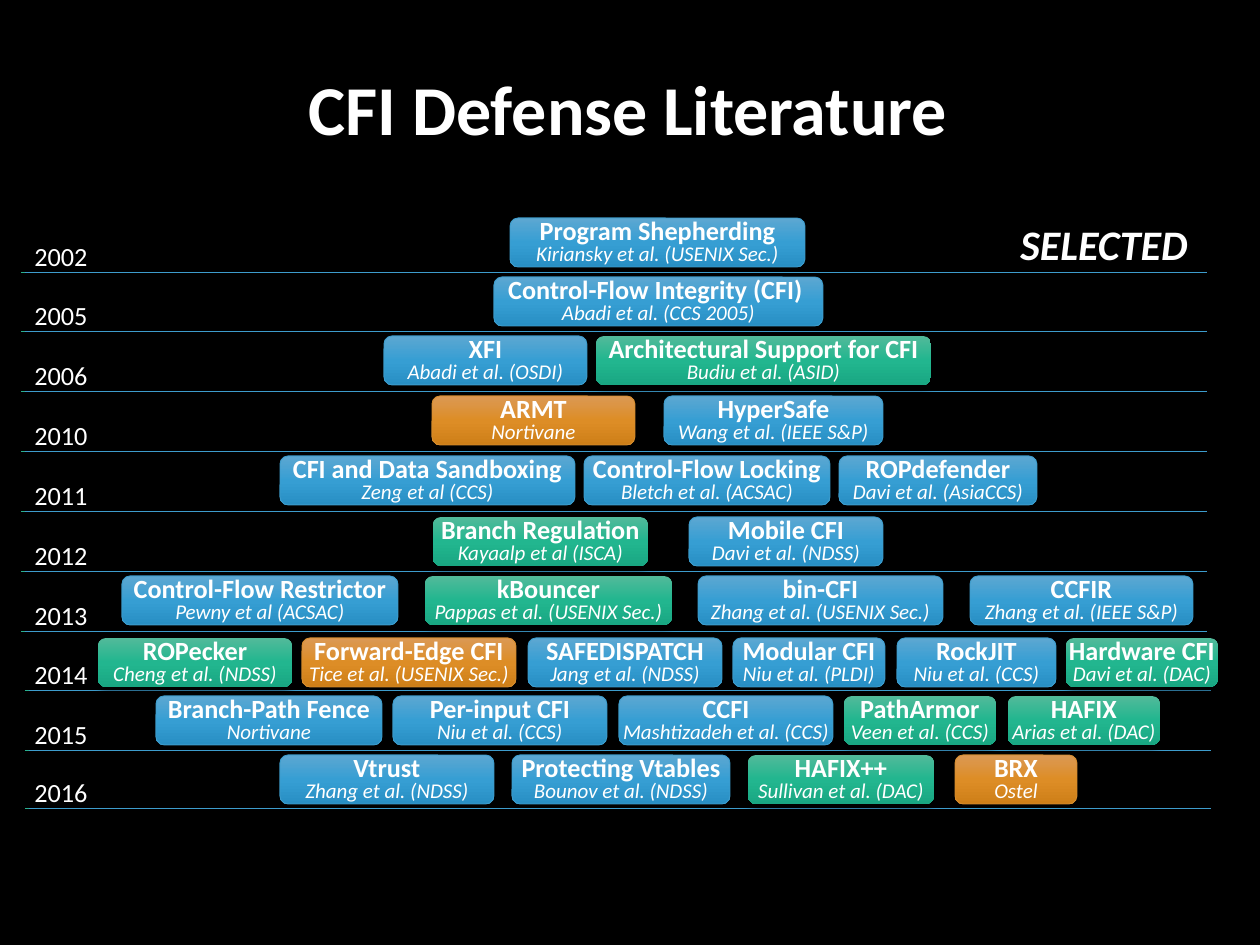
import lxml.etree
import pptx
import pptx.dml.color
import pptx.enum.shapes
import pptx.enum.text
import pptx.oxml
import pptx.oxml.ns
import pptx.util

EMU_PER_PX = 914400 / 126
CARD_HEIGHT = 49
COLORS = {"background": "000000", "text": "FFFFFF", "rule_green": "29AF8C", "rule_blue": "3D9CCC"}
KINDS = {
    "blue": {"stops": ("5DA7D2", "369ED3", "288FC4"), "border": "3D9CCC"},
    "green": {"stops": ("52BA9A", "22B68F", "19A782"), "border": None},
    "orange": {"stops": ("DB9955", "DD8D26", "CE7F18"), "border": "D58C2E"},
}
TITLE_FONT = {"size": pptx.util.Pt(40), "bold": True}
YEAR_FONT = {"size": pptx.util.Pt(15)}
NAME_FONT = {"size": pptx.util.Pt(15), "bold": True}
AUTHOR_FONT = {"size": pptx.util.Pt(12), "bold": False, "italic": True}
SELECTED_FONT = {"size": pptx.util.Pt(24), "bold": True, "italic": True}

YEARS = [
    ("2002", 272, 218, 21, [(510, 295, "blue", "Program Shepherding", "Kiriansky et al. (USENIX Sec.)")]),
    ("2005", 331, 277, 21, [(494, 329, "blue", "Control-Flow Integrity (CFI) ", "Abadi et al. (CCS 2005)")]),
    ("2006", 391, 336, 21, [
        (384, 203, "blue", "XFI", "Abadi et al. (OSDI)"),
        (596, 335, "green", "Architectural Support for CFI", "Budiu et al. (ASID)")]),
    ("2010", 451, 396, 21, [
        (432, 203, "orange", "ARMT", "Nortivane"),
        (664, 219, "blue", "HyperSafe", "Wang et al. (IEEE S&P)")]),
    ("2011", 511, 456, 21, [
        (280, 295, "blue", "CFI and Data Sandboxing", "Zeng et al (CCS)"),
        (584, 246, "blue", "Control-Flow Locking", "Bletch et al. (ACSAC)"),
        (839, 198, "blue", "ROPdefender", "Davi et al. (AsiaCCS)")]),
    ("2012", 571, 517, 21, [
        (433, 215, "green", "Branch Regulation", "Kayaalp et al (ISCA)"),
        (689, 194, "blue", "Mobile CFI", "Davi et al. (NDSS)")]),
    ("2013", 631, 576, 21, [
        (122, 276, "blue", "Control-Flow Restrictor", "Pewny et al (ACSAC)"),
        (425, 247, "green", "kBouncer", "Pappas et al. (USENIX Sec.)"),
        (698, 245, "blue", "bin-CFI", "Zhang et al. (USENIX Sec.)"),
        (970, 223, "blue", "CCFIR", "Zhang et al. (IEEE S&P)")]),
    ("2014", 690, 638, 25, [
        (98, 194, "green", "ROPecker", "Cheng et al. (NDSS)"),
        (302, 214, "orange", "Forward-Edge CFI", "Tice et al. (USENIX Sec.)"),
        (528, 194, "blue", "SAFEDISPATCH", "Jang et al. (NDSS)"),
        (733, 152, "blue", "Modular CFI", "Niu et al. (PLDI)"),
        (897, 159, "blue", "RockJIT", "Niu et al. (CCS)"),
        (1066, 152, "green", "Hardware CFI", "Davi et al. (DAC)")]),
    ("2015", 750, 696, 25, [
        (156, 226, "blue", "Branch-Path Fence", "Nortivane"),
        (393, 214, "blue", "Per-input CFI", "Niu et al. (CCS)"),
        (619, 214, "blue", "CCFI", "Mashtizadeh et al. (CCS)"),
        (844, 152, "green", "PathArmor", "Veen et al. (CCS)"),
        (1008, 152, "green", "HAFIX", "Arias et al. (DAC)")]),
    ("2016", 808, 755, 25, [
        (280, 214, "blue", "Vtrust", "Zhang et al. (NDSS)"),
        (512, 218, "blue", "Protecting Vtables", "Bounov et al. (NDSS)"),
        (748, 186, "green", "HAFIX++", "Sullivan et al. (DAC)"),
        (955, 122, "orange", "BRX", "Ostel")]),
]


def px(*lengths):
    """Turn pixel lengths into EMU."""
    return [pptx.util.Emu(round(length * EMU_PER_PX)) for length in lengths]


def rgb(value):
    """Turn a hex string into a colour."""
    return pptx.dml.color.RGBColor.from_string(value)


def apply(target, values):
    """Set each named attribute on the target."""
    for attribute, value in values.items():
        setattr(target, attribute, value)


def add_run(paragraph, wording, font):
    """Append a run in the slide's typeface."""
    run = paragraph.add_run()
    run.text = wording
    apply(run.font, {"name": "Calibri", **font})
    run.font.color.rgb = rgb(COLORS["text"])


def add_label(slide, box, wording, font, frame=None, paragraph=None):
    """Add a text box holding one line."""
    label = slide.shapes.add_textbox(*px(*box)).text_frame
    apply(label, frame or {})
    apply(label.paragraphs[0], paragraph or {})
    add_run(label.paragraphs[0], wording, font)


def add_rule(slide, left, y, color):
    """Add a thin line under a year."""
    rule = slide.shapes.add_connector(
        pptx.enum.shapes.MSO_CONNECTOR.STRAIGHT, *px(left, y, left + 1182, y))
    rule.line.color.rgb = rgb(color)
    rule.line.width = pptx.util.Pt(0.5)
    lxml.etree.SubElement(rule._element.spPr, pptx.oxml.ns.qn("a:effectLst"))


def paint_gradient(card, stops):
    """Fill a card with a vertical three-stop gradient."""
    marks = "".join(
        f'<a:gs pos="{i * 50000}"><a:srgbClr val="{stop}"/></a:gs>' for i, stop in enumerate(stops))
    gradient = pptx.oxml.parse_xml(
        f'<a:gradFill {pptx.oxml.ns.nsdecls("a")} rotWithShape="1"><a:gsLst>{marks}</a:gsLst>'
        '<a:lin ang="5400000" scaled="0"/></a:gradFill>')
    card._element.spPr.find(pptx.oxml.ns.qn("a:prstGeom")).addnext(gradient)


def add_shadow(card):
    """Give a card a soft shadow below it."""
    card._element.spPr.find(pptx.oxml.ns.qn("a:effectLst")).append(pptx.oxml.parse_xml(
        f'<a:outerShdw {pptx.oxml.ns.nsdecls("a")} blurRad="57150" dist="19050" dir="5400000" '
        'algn="ctr" rotWithShape="0"><a:srgbClr val="000000"><a:alpha val="63000"/></a:srgbClr>'
        '</a:outerShdw>'))


def add_card(slide, top, left, width, kind, name, authors):
    """Add a rounded card naming a defense and its authors."""
    card = slide.shapes.add_shape(
        pptx.enum.shapes.MSO_SHAPE.ROUNDED_RECTANGLE, *px(left, top, width, CARD_HEIGHT))
    card.shadow.inherit = False
    paint_gradient(card, KINDS[kind]["stops"])
    if KINDS[kind]["border"]:
        card.line.color.rgb = rgb(KINDS[kind]["border"])
        card.line.width = pptx.util.Pt(0.5)
    else:
        card.line.fill.background()
        add_shadow(card)
    apply(card.text_frame, {
        "margin_left": 0, "margin_right": 0, "word_wrap": True,
        "vertical_anchor": pptx.enum.text.MSO_ANCHOR.TOP})
    entry = card.text_frame.paragraphs[0]
    apply(entry, {"alignment": pptx.enum.text.PP_ALIGN.CENTER, "line_spacing": pptx.util.Pt(11.2)})
    add_run(entry, name, NAME_FONT)
    entry.add_line_break()
    add_run(entry, authors, AUTHOR_FONT)


def add_year(slide, year, baseline, card_top, rule_left, cards):
    """Add one year's label, rules and cards."""
    add_rule(slide, rule_left, baseline, COLORS["rule_green"])
    add_rule(slide, rule_left + 4, baseline, COLORS["rule_blue"])
    add_label(slide, (22, baseline - 38, 79, 44), year, YEAR_FONT, {"word_wrap": False})
    for card in cards:
        add_card(slide, card_top, *card)


def main():
    """Build and save the slide."""
    deck = pptx.Presentation()
    deck.slide_width, deck.slide_height = px(1260, 945)
    slide = deck.slides.add_slide(deck.slide_layouts[6])
    slide.background.fill.solid()
    slide.background.fill.fore_color.rgb = rgb(COLORS["background"])
    add_label(
        slide, (174, 72, 908, 82), "CFI Defense Literature", TITLE_FONT,
        {"word_wrap": True, "vertical_anchor": pptx.enum.text.MSO_ANCHOR.MIDDLE},
        {"alignment": pptx.enum.text.PP_ALIGN.CENTER, "line_spacing": 0.9})
    add_label(slide, (1008, 212, 194, 63), "SELECTED", SELECTED_FONT, {"word_wrap": True})
    for year in YEARS:
        add_year(slide, *year)
    deck.save("out.pptx")


if __name__ == "__main__":
    main()
